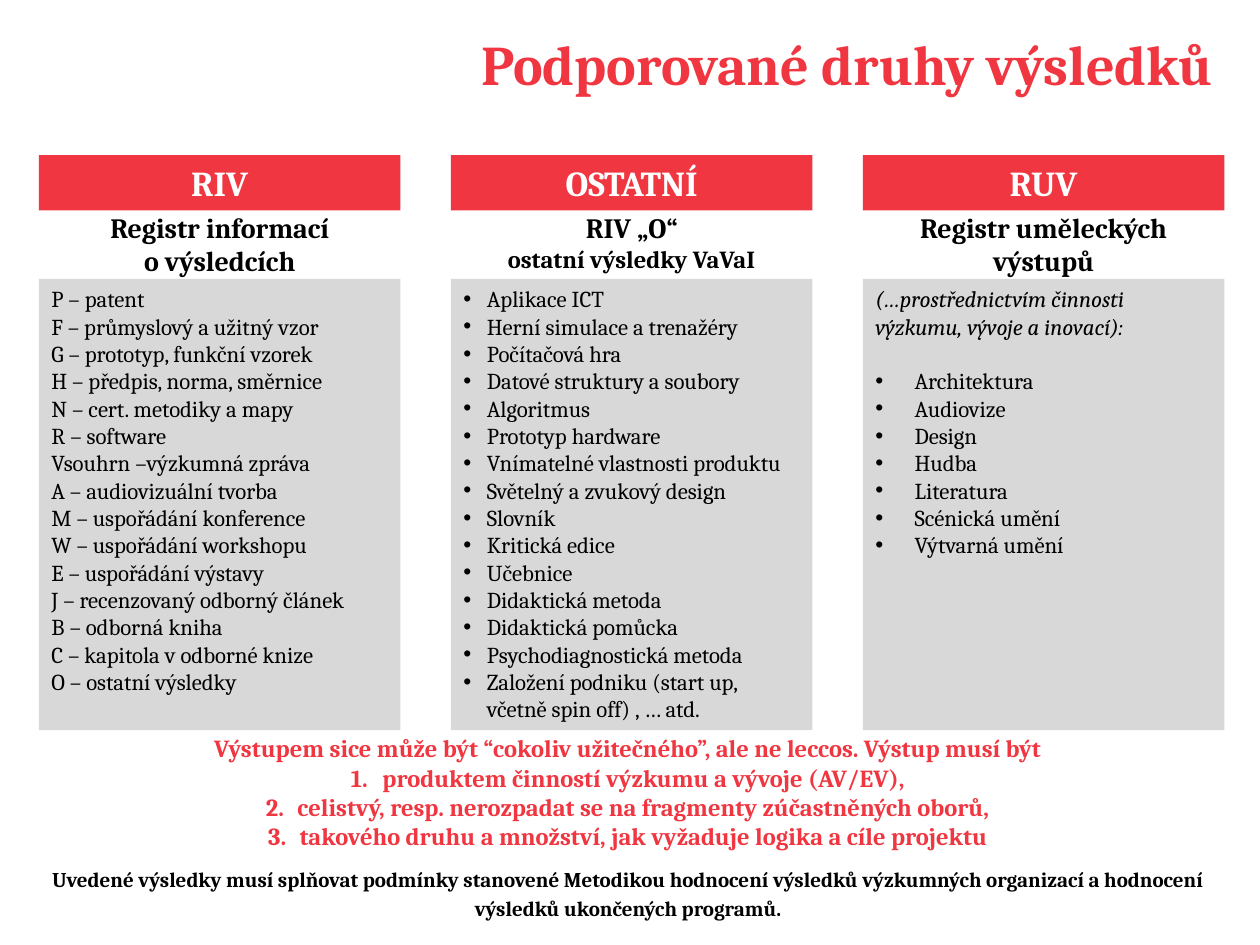
from lxml.etree import SubElement
from pptx import Presentation
from pptx.dml.color import RGBColor
from pptx.enum.shapes import MSO_SHAPE
from pptx.enum.text import MSO_ANCHOR, PP_ALIGN
from pptx.oxml.ns import qn
from pptx.util import Pt

RED, GREY, BLACK, WHITE = "F03741", "D8D8D8", "000000", "FFFFFF"
CARD_LEFT, CARD_WIDTH, CARD_PITCH = 22.3, 206.6, 235.4
HEADING = dict(size=20, bold=True, color=WHITE, align=PP_ALIGN.CENTER)
SUBHEADING = dict(size=16, bold=True, align=PP_ALIGN.CENTER)
ITEM = dict(size=13)
REQUIREMENT = dict(size=14, bold=True, color=RED, align=PP_ALIGN.CENTER)


def rgb(value):
    return RGBColor.from_string(value)


def lines(texts, style, **extra):
    return [(text, {**style, **extra}) for text in texts]


class ResultsSlide:
    font_name = "Cambria"

    def __init__(self, deck):
        self.slide = deck.slides.add_slide(deck.slide_layouts[5])

    def fill_text(self, frame, paragraphs, anchor=MSO_ANCHOR.TOP, inset=3.6):
        layout = dict(word_wrap=True, vertical_anchor=anchor,
                      margin_left=Pt(7.2), margin_right=Pt(7.2),
                      margin_top=Pt(inset), margin_bottom=Pt(inset))
        for name, value in layout.items():
            setattr(frame, name, value)
        for index, (text, style) in enumerate(paragraphs):
            paragraph = frame.add_paragraph() if index else frame.paragraphs[0]
            if "marker" in style:
                self.mark(paragraph, style["marker"], style["indent"])
            spacing = dict(alignment=style.get("align", PP_ALIGN.LEFT),
                           line_spacing=style.get("spacing", 1.0),
                           space_before=Pt(style.get("before", 0)))
            for name, value in spacing.items():
                setattr(paragraph, name, value)
            run = paragraph.add_run()
            run.text = text
            look = dict(name=self.font_name, size=Pt(style["size"]),
                        bold=style.get("bold", False), italic=style.get("italic", False))
            for name, value in look.items():
                setattr(run.font, name, value)
            run.font.color.rgb = rgb(style.get("color", BLACK))

    def mark(self, paragraph, marker, indent):
        properties = paragraph._p.get_or_add_pPr()
        properties.set("marL", str(Pt(indent)))
        properties.set("indent", str(-Pt(indent)))
        if marker == "number":
            SubElement(properties, qn("a:buFont"), typeface="+mj-lt")
            SubElement(properties, qn("a:buAutoNum"), type="arabicPeriod")
        else:
            SubElement(properties, qn("a:buFont"), typeface="Arial")
            SubElement(properties, qn("a:buChar"), char=marker)

    def title(self, text, left, top, width, height):
        title = self.slide.shapes.title
        place = dict(left=left, top=top, width=width, height=height)
        for name, value in place.items():
            setattr(title, name, Pt(value))
        style = dict(size=32, bold=True, color=RED, align=PP_ALIGN.RIGHT)
        self.fill_text(title.text_frame, [(text, style)], MSO_ANCHOR.MIDDLE)

    def panel(self, paragraphs, fill, *place):
        panel = self.slide.shapes.add_shape(MSO_SHAPE.RECTANGLE, *map(Pt, place))
        panel.shadow.inherit = False
        panel.fill.solid()
        panel.fill.fore_color.rgb = rgb(fill)
        panel.line.fill.background()
        self.fill_text(panel.text_frame, paragraphs)

    def text(self, paragraphs, *place, inset=3.6):
        box = self.slide.shapes.add_textbox(*map(Pt, place))
        self.fill_text(box.text_frame, paragraphs, inset=inset)

    def card(self, column, heading, subheading, items, overhang=0):
        left = CARD_LEFT + column * CARD_PITCH
        self.panel([(heading, HEADING)], RED, left, 88.6, CARD_WIDTH, 31.7)
        self.text(subheading, left - overhang, 116.6, CARD_WIDTH + 2 * overhang, 46)
        self.panel(items, GREY, left, 159.4, CARD_WIDTH, 257.8)


def main():
    deck = Presentation()
    deck.slide_width, deck.slide_height = Pt(720), Pt(540)
    page = ResultsSlide(deck)
    page.title("Podporované druhy výsledků", 7.2, 9.4, 693.4, 53.3)

    registry = [
        "P – patent", "F – průmyslový a užitný vzor", "G – prototyp, funkční vzorek",
        "H – předpis, norma, směrnice", "N – cert. metodiky a mapy", "R – software",
        "Vsouhrn –výzkumná zpráva", "A – audiovizuální tvorba",
        "M – uspořádání konference", "W – uspořádání workshopu",
        "E – uspořádání výstavy", "J – recenzovaný odborný článek",
        "B – odborná kniha", "C – kapitola v odborné knize", "O – ostatní výsledky",
    ]
    other = [
        "Aplikace ICT", "Herní simulace a trenažéry", "Počítačová hra",
        "Datové struktury a soubory", "Algoritmus", "Prototyp hardware",
        "Vnímatelné vlastnosti produktu", "Světelný a zvukový design", "Slovník",
        "Kritická edice", "Učebnice", "Didaktická metoda", "Didaktická pomůcka",
        "Psychodiagnostická metoda",
        "Založení podniku (start up, včetně spin off) , … atd.",
    ]
    arts = ["Audiovize", "Design", "Hudba", "Literatura", "Scénická umění", "Výtvarná umění"]
    art_item = dict(ITEM, marker="•", indent=22.5)
    art_items = (
        lines(["(…prostřednictvím činnosti výzkumu, vývoje a inovací):"], ITEM, italic=True)
        + lines(["Architektura"], art_item, before=15.6)
        + lines(arts, art_item)
    )

    page.card(0, "RIV", lines(["Registr informací", "o výsledcích"], SUBHEADING),
              lines(registry, ITEM))
    page.card(1, "OSTATNÍ",
              lines(["RIV „O“"], SUBHEADING)
              + lines(["ostatní výsledky VaVaI"], SUBHEADING, size=14),
              lines(other, ITEM, marker="•", indent=13.5), overhang=28.4)
    page.card(2, "RUV", lines(["Registr uměleckých výstupů"], SUBHEADING), art_items)

    requirements = [
        "produktem činností výzkumu a vývoje (AV/EV),",
        "celistvý, resp. nerozpadat se na fragmenty zúčastněných oborů,",
        "takového druhu a množství, jak vyžaduje logika a cíle projektu",
    ]
    page.text(
        lines(["Výstupem sice může být “cokoliv užitečného”, ale ne leccos. Výstup musí být"],
              REQUIREMENT)
        + lines(requirements, REQUIREMENT, marker="number", indent=18)
        + lines(["Uvedené výsledky musí splňovat podmínky stanovené Metodikou hodnocení "
                 "výsledků výzkumných organizací a hodnocení výsledků ukončených programů."],
                REQUIREMENT, size=12, color=BLACK, spacing=1.15, before=7),
        17.3, 411.8, 683.3, 105.8, inset=7.2)
    deck.save("out.pptx")


if __name__ == "__main__":
    main()
